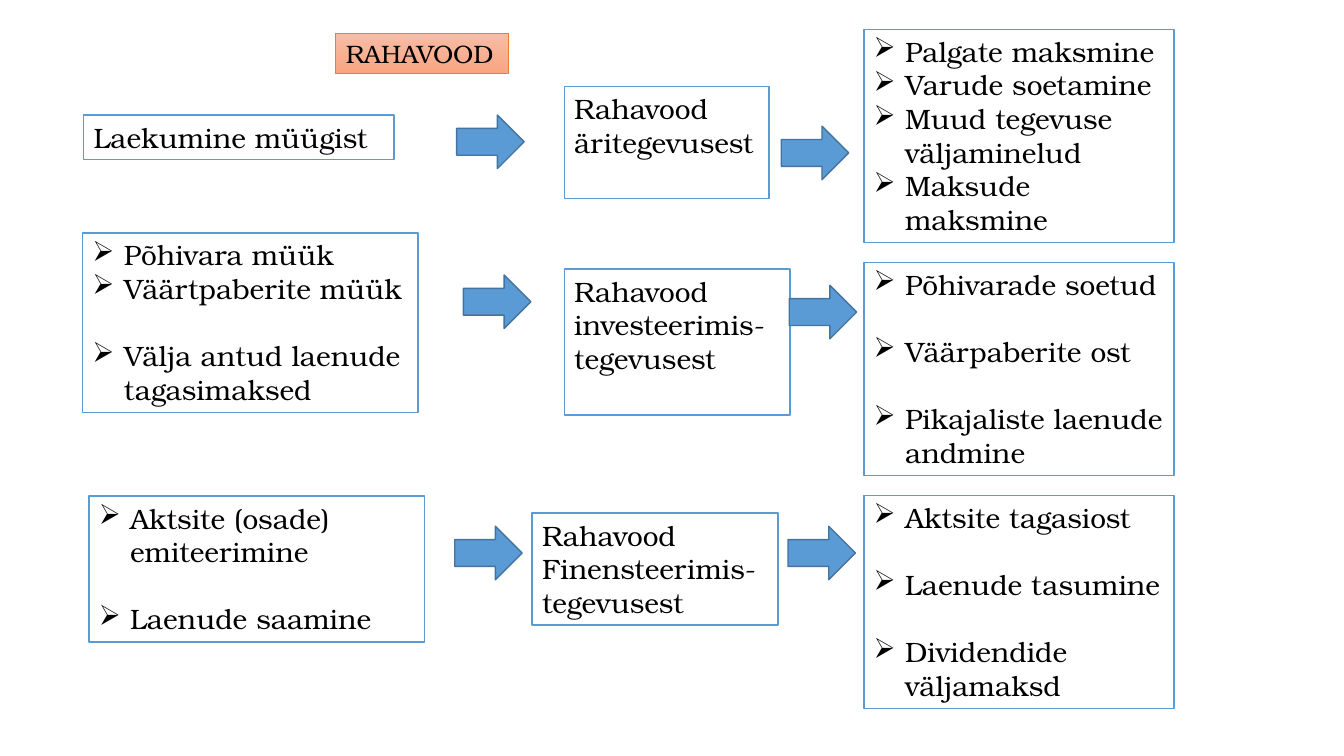
"""Build the cash flow slide: inflows, activities and outflows joined by arrows."""
from lxml import etree
from pptx import Presentation
from pptx import util as u
from pptx.dml.color import RGBColor
from pptx.enum import shapes, text
from pptx.oxml.ns import qn

FONT = "TeX Gyre Bonum"
COLOURS = {
    "text": "000000",
    "box": "FFFFFF",
    "border": "5B9BD5",
    "arrow": "5B9BD5",
    "arrow_border": "43739E",
    "title_top": "F7BDA5",
    "title_bottom": "F8A582",
    "title_border": "ED7D31",
}
BULLET_INDENT = u.Cm(0.79)
BLANK_LINE = u.Pt(24)

INFLOWS = [
    ((2.08, 5.87, 8.46, 4.52),
     ["Põhivara müük", "Väärtpaberite müük", "Välja antud laenude tagasimaksed"], {2}),
    ((2.24, 12.5, 8.46, 3.68),
     ["Aktsite (osade) emiteerimine", "Laenude saamine"], {1}),
]
ACTIVITIES = [
    ((14.22, 2.18, 5.16, 2.83), ["Rahavood äritegevusest"]),
    ((14.22, 6.78, 5.69, 3.68), ["Rahavood investeerimis-", "tegevusest"]),
    ((13.41, 12.93, 6.2, 2.82), ["Rahavood", "Finensteerimis-", "tegevusest"]),
]
OUTFLOWS = [
    (["Palgate maksmine", "Varude soetamine", "Muud tegevuse väljaminelud",
      "Maksude maksmine"], set()),
    (["Põhivarade soetud", "Väärpaberite ost", "Pikajaliste laenude andmine"], {1, 2}),
    (["Aktsite tagasiost", "Laenude tasumine", "Dividendide väljamaksd"], {1, 2}),
]
ARROWS = [
    (11.51, 2.9), (11.68, 6.93), (11.46, 13.26),
    (19.69, 3.18), (19.89, 7.19), (19.86, 13.26),
]


def colour(name):
    return RGBColor.from_string(COLOURS[name])


def paint(shape, fill, border):
    shape.fill.solid()
    shape.fill.fore_color.rgb = colour(fill)
    shape.line.color.rgb = colour(border)
    shape.line.width = u.Pt(1)


def set_font(paragraph, size):
    paragraph.font.name = FONT
    paragraph.font.size = u.Pt(size)
    paragraph.font.color.rgb = colour("text")


def add_bullet(paragraph):
    properties = paragraph._p.get_or_add_pPr()
    properties.set("marL", str(BULLET_INDENT))
    properties.set("indent", str(-BULLET_INDENT))
    etree.SubElement(properties, qn("a:buChar"), char="➢")


def add_box(slide, bounds, lines, bulleted=False, spaced=()):
    box = slide.shapes.add_textbox(*map(u.Cm, bounds))
    paint(box, "box", "border")
    frame = box.text_frame
    frame.word_wrap = True
    frame.text = "\n".join(lines)
    for index, paragraph in enumerate(frame.paragraphs):
        if bulleted:
            add_bullet(paragraph)
        if index in spaced:
            paragraph.space_before = BLANK_LINE
        set_font(paragraph, 20)


def add_arrow(slide, left, top):
    arrow = slide.shapes.add_shape(
        shapes.MSO_SHAPE.RIGHT_ARROW, u.Cm(left), u.Cm(top), u.Cm(1.7), u.Cm(1.35))
    arrow.shadow.inherit = False
    paint(arrow, "arrow", "arrow_border")


def format_title(title):
    title.left, title.top, title.width, title.height = map(
        u.Cm, (8.46, 0.84, 4.34, 1.02))
    title.fill.gradient()
    title.fill.gradient_angle = 270
    for stop, name in zip(title.fill.gradient_stops, ("title_top", "title_bottom")):
        stop.color.rgb = colour(name)
    title.line.color.rgb = colour("title_border")
    title.line.width = u.Pt(0.5)
    frame = title.text_frame
    frame.text = "RAHAVOOD"
    frame.word_wrap = False
    frame.auto_size = text.MSO_AUTO_SIZE.NONE
    frame.vertical_anchor = text.MSO_ANCHOR.TOP
    heading = frame.paragraphs[0]
    heading.alignment = text.PP_ALIGN.LEFT
    set_font(heading, 18)


def main():
    deck = Presentation()
    deck.slide_width, deck.slide_height = u.Cm(33.87), u.Cm(19.05)
    slide = deck.slides.add_slide(deck.slide_layouts.get_by_name("Title Only"))
    format_title(slide.shapes.title)

    add_box(slide, (2.11, 2.9, 7.82, 1.12), ["Laekumine müügist"])
    for bounds, lines, spaced in INFLOWS:
        add_box(slide, bounds, lines, True, spaced)
    for bounds, lines in ACTIVITIES:
        add_box(slide, bounds, lines)
    for row, (lines, spaced) in enumerate(OUTFLOWS):
        add_box(slide, (21.77, 0.74 + row * 5.87, 7.82, 5.38), lines, True, spaced)
    for left, top in ARROWS:
        add_arrow(slide, left, top)

    deck.save("out.pptx")


if __name__ == "__main__":
    main()
